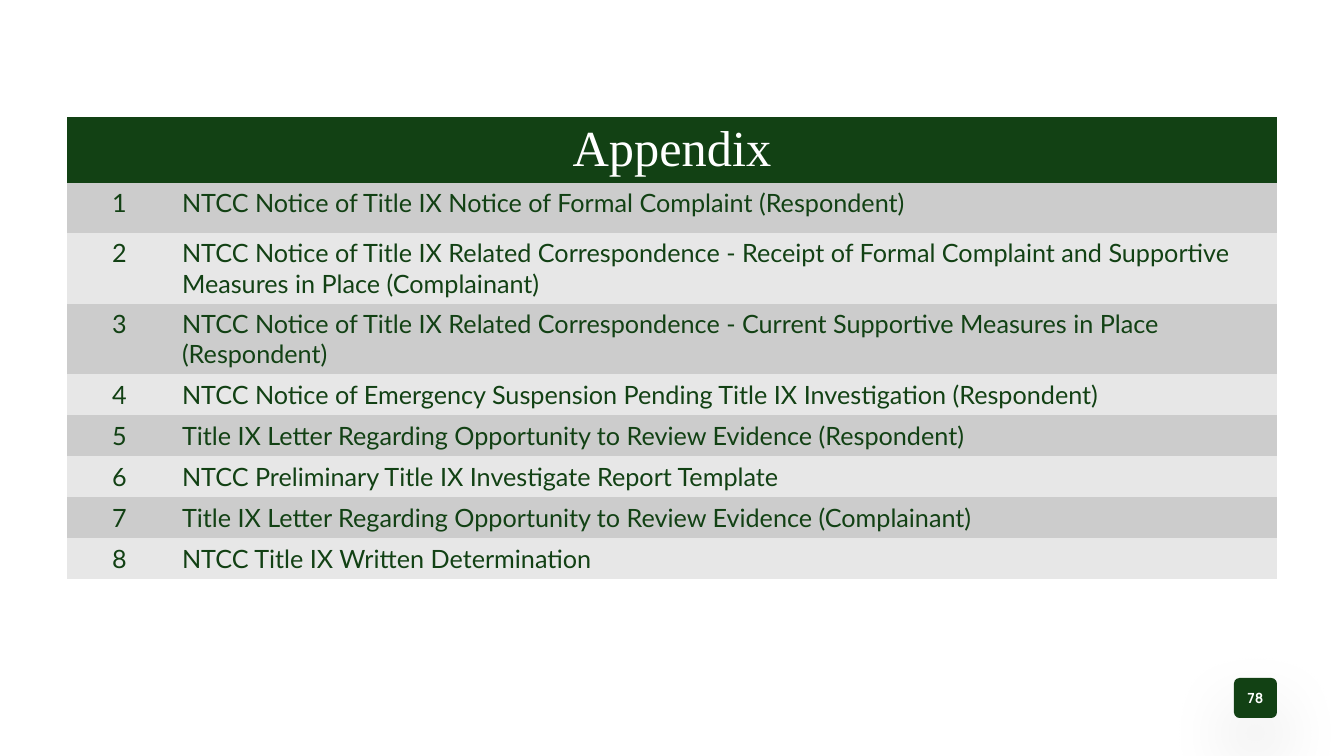
from lxml.etree import SubElement
from pptx import Presentation
from pptx.dml.color import RGBColor
from pptx.enum.shapes import MSO_SHAPE
from pptx.enum.text import MSO_ANCHOR, PP_ALIGN
from pptx.oxml.ns import qn
from pptx.util import Emu, Pt

COLORS = {
    "green": "124114",
    "white": "FFFFFF",
    "dark band": "CCCCCC",
    "light band": "E7E7E7",
    "shadow": "000000",
}
NO_STYLE_NO_GRID = "{2D5ABB26-0587-4C30-8999-92F81FD0307C}"
# Each appendix document with the height of its row in px
DOCUMENTS = [
    ("NTCC Notice of Title IX Notice of Formal Complaint (Respondent)", 50),
    ("NTCC Notice of Title IX Related Correspondence - Receipt of Formal Complaint "
     "and Supportive Measures in Place (Complainant)", 70),
    ("NTCC Notice of Title IX Related Correspondence - Current Supportive Measures "
     "in Place (Respondent)", 70),
    ("NTCC Notice of Emergency Suspension Pending Title IX Investigation (Respondent)", 41),
    ("Title IX Letter Regarding Opportunity to Review Evidence (Respondent)", 41),
    ("NTCC Preliminary Title IX Investigate Report Template", 41),
    ("Title IX Letter Regarding Opportunity to Review Evidence (Complainant)", 41),
    ("NTCC Title IX Written Determination", 41),
]
HEADER_HEIGHT = 66
COLUMN_WIDTHS = [105, 1105]


def px(length):
    return Emu(round(length * 914400 / 100.8))


def color(name):
    return RGBColor.from_string(COLORS[name])


def write(frame, text, font, size, ink, align=PP_ALIGN.LEFT, bold=False):
    para = frame.paragraphs[0]
    para.text = text
    para.alignment = align
    para.font.name = font
    para.font.size = Pt(size)
    para.font.bold = bold
    para.font.color.rgb = color(ink)


def fill_cell(cell, band, *text_style):
    cell.fill.solid()
    cell.fill.fore_color.rgb = color(band)
    write(cell.text_frame, *text_style)


def add_appendix_table(page, left, top):
    heights = [HEADER_HEIGHT] + [height for _, height in DOCUMENTS]
    frame = page.shapes.add_table(len(heights), len(COLUMN_WIDTHS), px(left), px(top),
                                  px(sum(COLUMN_WIDTHS)), px(sum(heights)))
    table = frame.table
    table._tbl.tblPr.find(qn("a:tableStyleId")).text = NO_STYLE_NO_GRID
    for column, width in zip(table.columns, COLUMN_WIDTHS):
        column.width = px(width)
    for row, height in zip(table.rows, heights):
        row.height = px(height)

    # Header across both columns
    header = table.cell(0, 0)
    header.merge(table.cell(0, 1))
    fill_cell(header, "green", "Appendix", "Times New Roman", 36, "white", PP_ALIGN.CENTER)

    # Numbered documents in alternating bands
    for number, (document, _) in enumerate(DOCUMENTS, start=1):
        band = "dark band" if number % 2 else "light band"
        fill_cell(table.cell(number, 0), band, str(number), "Lato", 18, "green", PP_ALIGN.CENTER)
        fill_cell(table.cell(number, 1), band, document, "Lato", 18, "green")


def add_soft_shadow(shape):
    shape.shadow.inherit = False
    effects = shape._element.spPr.find(qn("a:effectLst"))
    shadow = SubElement(effects, qn("a:outerShdw"), blurRad=str(Pt(52)), dist=str(Pt(25)),
                        dir="5400000", algn="t", rotWithShape="0")
    tint = SubElement(shadow, qn("a:srgbClr"), val=COLORS["shadow"])
    SubElement(tint, qn("a:alpha"), val="15000")


def add_number_badge(page, left, top, width, height):
    badge = page.shapes.add_shape(MSO_SHAPE.ROUNDED_RECTANGLE,
                                  px(left), px(top), px(width), px(height))
    badge.adjustments[0] = 0.14
    badge.fill.solid()
    badge.fill.fore_color.rgb = color("green")
    badge.line.fill.background()
    add_soft_shadow(badge)


def add_page_number(page, text, left, top, width, height):
    box = page.shapes.add_textbox(px(left), px(top), px(width), px(height))
    box.text_frame.word_wrap = True
    box.text_frame.vertical_anchor = MSO_ANCHOR.MIDDLE
    write(box.text_frame, text, "Manrope", 10, "white", PP_ALIGN.CENTER, bold=True)


def main():
    deck = Presentation()
    deck.slide_width, deck.slide_height = px(1344), px(756)
    page = deck.slides.add_slide(deck.slide_layouts[6])
    add_number_badge(page, 1234, 678, 43, 40)
    add_appendix_table(page, 67, 117)
    add_page_number(page, "78", 1222, 678, 67, 40)
    deck.save("out.pptx")


if __name__ == "__main__":
    main()
